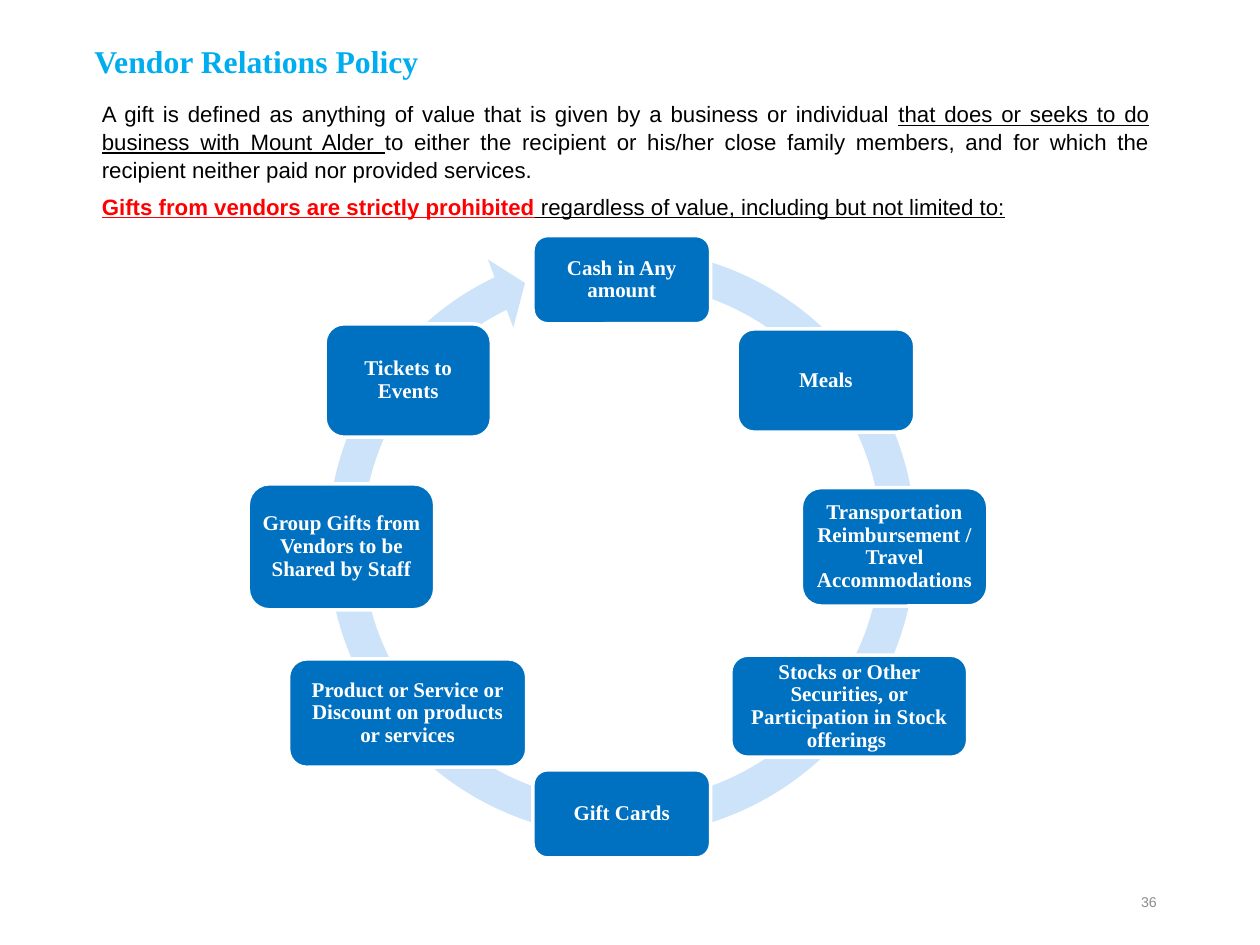
from pptx import Presentation
from pptx.dml.color import RGBColor
from pptx.enum.shapes import MSO_SHAPE
from pptx.enum.text import MSO_ANCHOR, PP_ALIGN
from pptx.util import Inches, Pt

ARROW, ROUND = MSO_SHAPE.CIRCULAR_ARROW, MSO_SHAPE.ROUNDED_RECTANGLE
MIDDLE = MSO_ANCHOR.MIDDLE
LEFT, CENTER, RIGHT, JUST = (PP_ALIGN.LEFT, PP_ALIGN.CENTER,
                             PP_ALIGN.RIGHT, PP_ALIGN.JUSTIFY)
COLS, ROWS, CELL = 100, 75, 0.1
SERIF, SANS = "Times New Roman", "Arial"
BLUE, PALE, WHITE, BLACK, RED = "0070C0", "CCE3F9", "FFFFFF", "000000", "FF0000"

GIFTS = [
    ("Cash in Any amount", (42.3, 18.7, 14.1, 7)),
    ("Meals", (58.5, 26.1, 14.1, 8.2)),
    ("Transportation Reimbursement / Travel Accommodations",
     (63.6, 38.7, 14.8, 9.4)),
    ("Stocks or Other Securities, or Participation in Stock offerings ",
     (58, 52, 18.8, 8.1)),
    ("Gift Cards", (42.3, 61.1, 14.1, 7)),
    ("Product or Service or Discount on products or services",
     (22.9, 52.3, 18.9, 8.6)),
    ("Group Gifts from Vendors to be Shared by Staff",
     (19.7, 38.4, 14.8, 10)),
    ("Tickets to Events", (25.8, 25.7, 13.2, 9)),
]


def color(code):
    """Turn a hex string into a colour."""
    return RGBColor.from_string(code)


def grid(*cells):
    """Turn columns and rows into lengths."""
    return [Inches(n * CELL) for n in cells]


def add_run(para, text, size, face, tint, bold=False, under=False):
    """Add one styled run to a paragraph."""
    run = para.add_run()
    run.text = text
    font = run.font
    font.size, font.name = Pt(size), face
    font.bold, font.underline = bold, under
    font.color.rgb = color(tint)


def set_frame(frame, side):
    """Wrap the text and set its margins."""
    frame.word_wrap = True
    frame.margin_left = frame.margin_right = Inches(side)
    frame.margin_top = frame.margin_bottom = Inches(0.05)


def add_text(slide, place, paras, size, face, align=LEFT, lead=1.0):
    """Add a text box, each paragraph a list of runs."""
    frame = slide.shapes.add_textbox(*grid(*place)).text_frame
    set_frame(frame, 0.1)
    for i, runs in enumerate(paras):
        para = frame.add_paragraph() if i else frame.paragraphs[0]
        para.alignment, para.line_spacing = align, lead
        para.space_before = Pt(5.4 if i else 0)
        for text, *style in runs:
            add_run(para, text, size, face, *style)


def add_form(slide, kind, place, fill):
    """Add a plain filled shape."""
    form = slide.shapes.add_shape(kind, *grid(*place))
    form.shadow.inherit = False
    form.fill.solid()
    form.fill.fore_color.rgb = color(fill)
    form.line.fill.background()
    return form


def add_ring(slide):
    """Add the circular arrow behind the gifts."""
    ring = add_form(slide, ARROW, (24.5, 18.2, 49.7, 49.7), PALE)
    for i, value in enumerate((0.055, 3.307, 146.426, 168.78, 0.058)):
        ring.adjustments[i] = value


def add_gift(slide, text, place):
    """Add one labelled gift box."""
    gift = add_form(slide, ROUND, place, BLUE)
    gift.line.color.rgb = color(WHITE)
    gift.line.width = Pt(2)
    frame = gift.text_frame
    set_frame(frame, 0.05)
    frame.vertical_anchor = MIDDLE
    para = frame.paragraphs[0]
    para.alignment, para.line_spacing = CENTER, 0.9
    add_run(para, text, 12, SERIF, WHITE, True)


def main():
    """Build and save the slide."""
    deck = Presentation()
    deck.slide_width, deck.slide_height = grid(COLS, ROWS)
    slide = deck.slides.add_slide(deck.slide_layouts[6])
    add_text(slide, (6.5, 2.8, 85.7, 4.5),
             [[("Vendor Relations Policy", "00AEEF", True)]], 18.1, SERIF)
    add_ring(slide)
    for text, place in GIFTS:
        add_gift(slide, text, place)
    add_text(slide, (70.6, 70.4, 22.2, 4), [[("36", "8C8C8C")]],
             8.1, SANS, RIGHT)
    add_text(slide, (7.1, 7.4, 85.1, 10.2), [
        [("A gift is defined as anything of value that is given by a "
          "business or individual ", BLACK),
         ("that does or seeks to do business with Mount Alder ",
          BLACK, False, True),
         ("to either the recipient or his/her close family members, and for "
          "which the recipient neither paid nor provided services.", BLACK)],
        [("Gifts from vendors are strictly prohibited", RED, True, True),
         (" regardless of value, including but not limited to:",
          BLACK, False, True)],
    ], 12.7, SANS, JUST, 1.04)
    deck.save("out.pptx")


if __name__ == "__main__":
    main()
